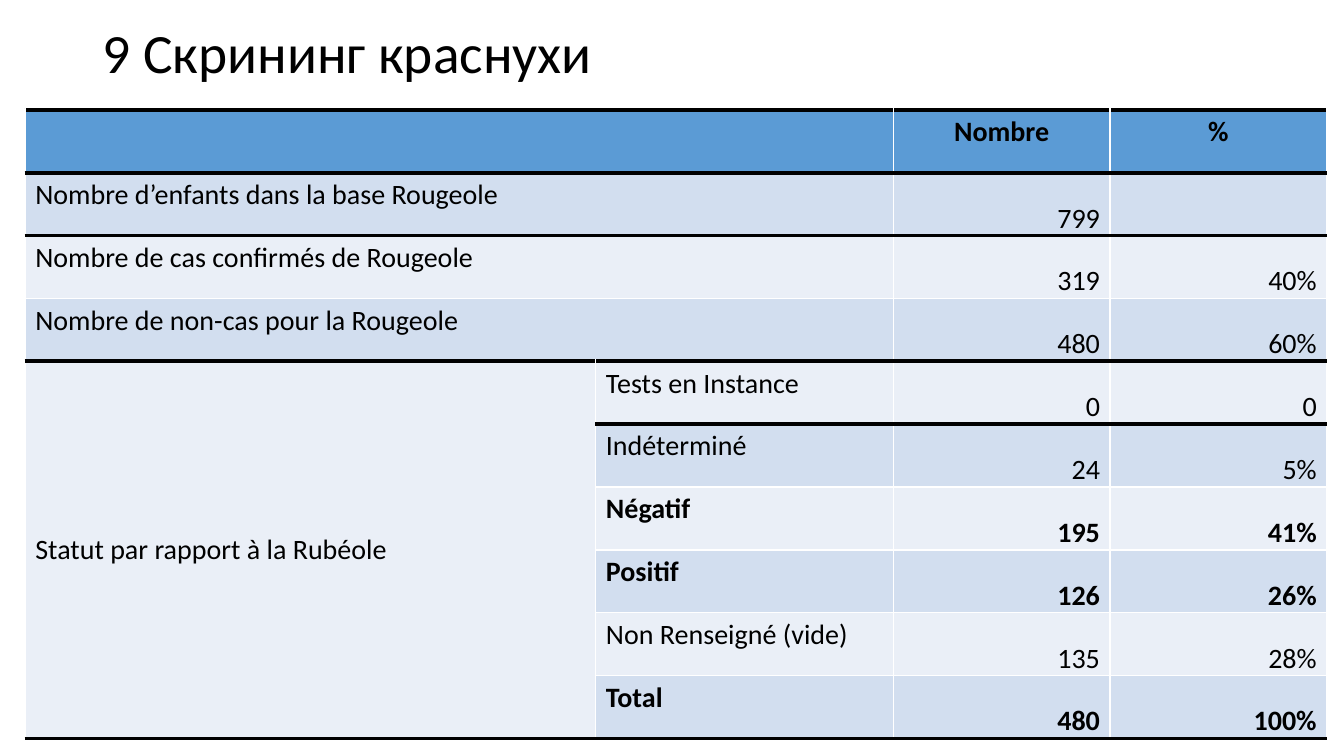
"""Build the rubella screening slide with its table of counts."""
import pptx
import pptx.util
import pptx.dml.color
import pptx.enum.text
import pptx.oxml.ns
from lxml import etree

Inches = pptx.util.Inches
Pt = pptx.util.Pt
RGBColor = pptx.dml.color.RGBColor
Align = pptx.enum.text.PP_ALIGN
Anchor = pptx.enum.text.MSO_ANCHOR
qn = pptx.oxml.ns.qn

TITLE = "9 Скрининг краснухи"
FONT = "Calibri"
ROWS = [
    ("", "", "Nombre", "%"),
    ("Nombre d’enfants dans la base Rougeole", "", "799", ""),
    ("Nombre de cas confirmés de Rougeole", "", "319", "40%"),
    ("Nombre de non-cas pour la Rougeole", "", "480", "60%"),
    ("Statut par rapport à la Rubéole", "Tests en Instance", "0", "0"),
    ("", "Indéterminé", "24", "5%"),
    ("", "Négatif", "195", "41%"),
    ("", "Positif", "126", "26%"),
    ("", "Non Renseigné (vide)", "135", "28%"),
    ("", "Total", "480", "100%"),
]
WIDTHS = (5.66, 2.95, 2.15, 2.15)
LEFT, TOP, HEIGHT = 0.25, 1.09, 6.24
STATUS = 4
LAST = len(ROWS) - 1
BOLD = {0, 6, 7, LAST}
HEAVY = {0, 1, 2, 4, 5, len(ROWS)}

BLACK = RGBColor(0x00, 0x00, 0x00)
WHITE = RGBColor(0xFF, 0xFF, 0xFF)
BLUE = RGBColor(0x5B, 0x9B, 0xD5)
BANDS = (RGBColor(0xEA, 0xEF, 0xF7), RGBColor(0xD2, 0xDE, 0xEF))


def style(para, size, bold=False):
    para.font.name = FONT
    para.font.size = Pt(size)
    para.font.bold = bold
    para.font.color.rgb = BLACK


def border(cell, side, heavy):
    color, width = (BLACK, 3) if heavy else (WHITE, 1)
    line = etree.SubElement(cell._tc.get_or_add_tcPr(), qn("a:ln" + side), w=str(Pt(width)))
    fill = etree.SubElement(line, qn("a:solidFill"))
    etree.SubElement(fill, qn("a:srgbClr"), val=str(color))


def fill_cell(cell, row, col, text):
    inner = col == 0 and row > STATUS
    base = LAST if col == 0 and row >= STATUS else row
    for side, heavy in (
        ("L", False),
        ("R", False),
        ("T", row in HEAVY and not inner),
        ("B", base + 1 in HEAVY),
    ):
        border(cell, side, heavy)
    cell.fill.solid()
    cell.fill.fore_color.rgb = BANDS[row % 2] if row else BLUE
    if text:
        cell.text = text
    para = cell.text_frame.paragraphs[0]
    style(para, 20, row in BOLD)
    if row == 0:
        para.alignment = Align.CENTER
    elif col > 1 and text:
        para.alignment = Align.RIGHT
        cell.vertical_anchor = Anchor.BOTTOM
        cell.margin_left = cell.margin_top = Inches(0.01)
        cell.margin_right, cell.margin_bottom = Inches(0.1), 0
    elif (row, col) == (STATUS, 0):
        cell.vertical_anchor = Anchor.MIDDLE


def add_title(slide):
    box = slide.shapes.add_textbox(Inches(0.92), Inches(0.4), Inches(11.5), Inches(0.91))
    frame = box.text_frame
    frame.word_wrap = True
    frame.vertical_anchor = Anchor.MIDDLE
    frame.margin_bottom = Inches(0.65)
    para = frame.paragraphs[0]
    para.text = TITLE
    para.line_spacing = 0.9
    style(para, 39.6)


def add_grid(slide):
    grid = slide.shapes.add_table(
        len(ROWS), len(WIDTHS), Inches(LEFT), Inches(TOP), Inches(sum(WIDTHS)), Inches(HEIGHT)
    ).table
    grid.first_row = grid.horz_banding = False
    for column, width in zip(grid.columns, WIDTHS):
        column.width = Inches(width)
    for row, texts in enumerate(ROWS):
        grid.rows[row].height = Inches(HEIGHT / len(ROWS))
        for col, text in enumerate(texts):
            fill_cell(grid.cell(row, col), row, col, text)
    for row in range(STATUS):
        grid.cell(row, 0).merge(grid.cell(row, 1))
    grid.cell(STATUS, 0).merge(grid.cell(LAST, 0))


def main():
    deck = pptx.Presentation()
    deck.slide_width, deck.slide_height = Inches(13.33), Inches(7.5)
    slide = deck.slides.add_slide(deck.slide_layouts[6])
    add_title(slide)
    add_grid(slide)
    deck.save("out.pptx")


if __name__ == "__main__":
    main()
